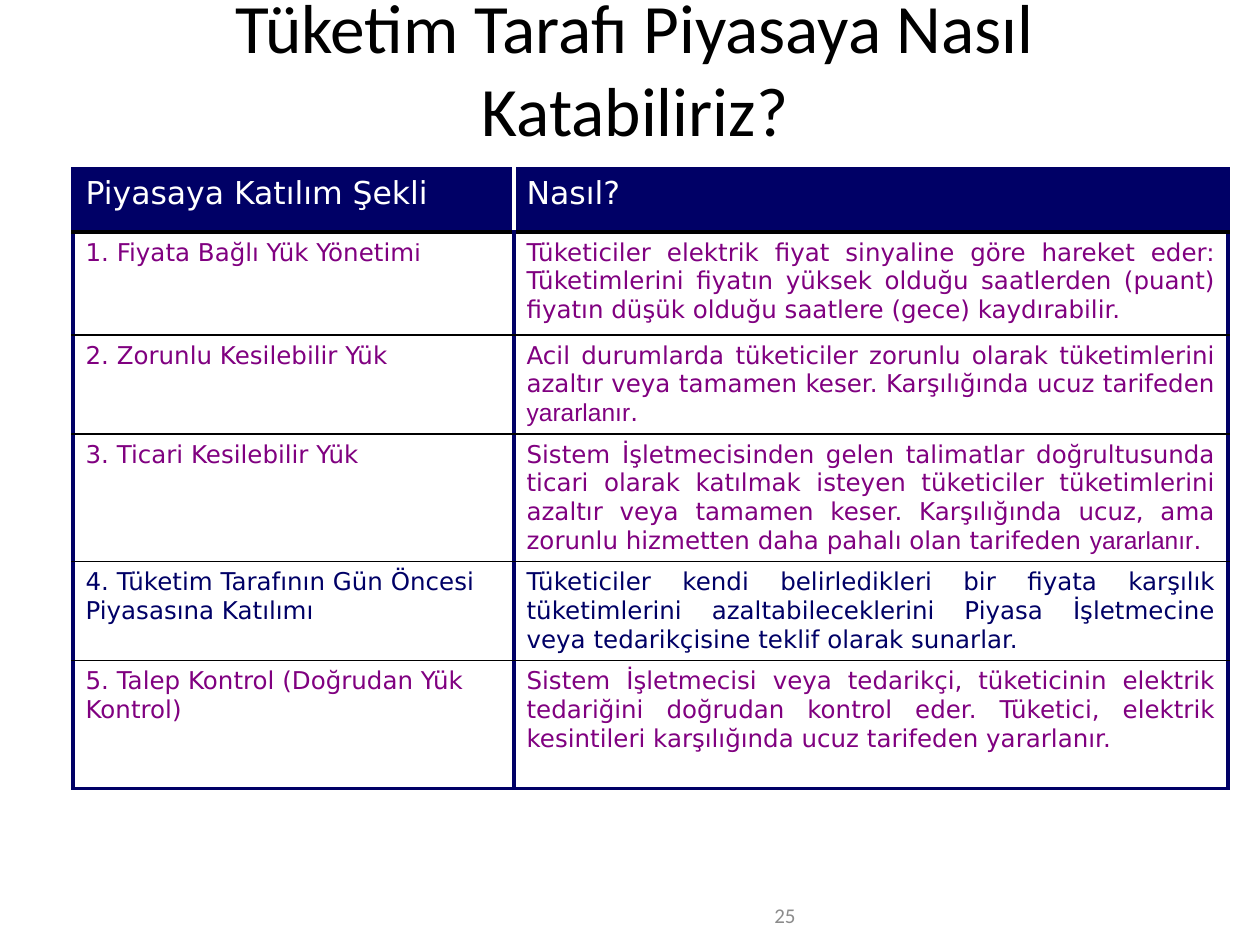
from lxml.etree import SubElement
from pptx import Presentation
from pptx.dml.color import RGBColor
from pptx.enum.text import MSO_ANCHOR as ANCHOR, MSO_AUTO_SIZE as AUTO_SIZE, PP_ALIGN as ALIGN
from pptx.oxml.ns import qn
from pptx.util import Emu, Pt

PX = 914400 / 126
NAVY, PURPLE, WHITE, BLACK, GREY = "000066", "800080", "FFFFFF", "000000", "8C8C8C"
SANS = "DejaVu Sans"


def add_runs(paragraph, parts, size, color):
    """Add (text, font name) parts that share one size and colour."""
    for text, font_name in parts:
        run = paragraph.add_run()
        run.text = text
        formats = {"name": font_name, "size": Pt(size), "bold": False}
        for attribute, value in formats.items():
            setattr(run.font, attribute, value)
        run.font.color.rgb = RGBColor.from_string(color)


def add_border(cell, side, color, width):
    line = SubElement(cell._tc.get_or_add_tcPr(), qn(f"a:ln{side}"), w=str(Pt(width)))
    fill = SubElement(line, qn("a:solidFill"))
    SubElement(fill, qn("a:srgbClr"), val=color)


prs = Presentation()
prs.slide_width, prs.slide_height = [Emu(round(n * PX)) for n in (1260, 945)]
slide = prs.slides.add_slide(prs.slide_layouts[5])

# Title and page number
title = slide.shapes.title
title.left, title.top, title.width, title.height = [
    Emu(round(n * PX)) for n in (63, 31, 1144, 73)]
page_number = slide.shapes.add_textbox(*[Emu(round(n * PX)) for n in (546, 900, 262, 31)])
for box, text, size, color, align in (
    (title, "Tüketim Tarafı Piyasaya Nasıl Katabiliriz?", 39.6, BLACK, ALIGN.CENTER),
    (page_number, "25", 12, GREY, ALIGN.RIGHT),
):
    frame = box.text_frame
    frame.word_wrap = True
    frame.auto_size = AUTO_SIZE.NONE
    frame.vertical_anchor = ANCHOR.MIDDLE
    frame.paragraphs[0].alignment = align
    add_runs(frame.paragraphs[0], [(text, "Calibri")], size, color)

# Ways of taking part in the market
benefit = [("yararlanır", "Arial"), (". ", SANS)]
rows = [
    ([("Piyasaya Katılım Şekli", SANS)], [("Nasıl?", SANS)]),
    ([("1. Fiyata Bağlı Yük Yönetim", SANS), ("i", "Arial")],
     [("Tüketiciler elektrik fiyat sinyaline göre hareket eder: Tüketimlerini fiyatın "
       "yüksek olduğu saatlerden (puant) fiyatın düşük olduğu saatlere (gece) "
       "kaydırabilir.", SANS)]),
    ([("2. Zorunlu Kesilebilir Yük", SANS)],
     [("Acil durumlarda tüketiciler zorunlu olarak tüketimlerini azaltır veya tamamen "
       "keser. Karşılığında ucuz tarifeden ", SANS)] + benefit),
    ([("3. Ticari Kesilebilir Yük", SANS)],
     [("Sistem İşletmecisinden gelen talimatlar doğrultusunda ticari olarak katılmak "
       "isteyen tüketiciler tüketimlerini azaltır veya tamamen keser. Karşılığında "
       "ucuz, ama zorunlu hizmetten daha pahalı olan tarifeden ", SANS)] + benefit),
    ([("4. Tüketim Tarafının Gün Öncesi Piyasasına Katılımı", SANS)],
     [("Tüketiciler kendi belirledikleri bir fiyata karşılık tüketimlerini "
       "azaltabileceklerini Piyasa İşletmecine veya tedarikçisine teklif olarak "
       "sunarlar.", SANS)]),
    ([("5. Talep Kontrol (Doğrudan Yük Kontrol)", SANS)],
     [("Sistem İşletmecisi veya tedarikçi, tüketicinin elektrik tedariğini doğrudan "
       "kontrol eder. Tüketici, elektrik kesintileri karşılığında ucuz tarifeden "
       "yararlanır. ", SANS)]),
]
column_widths = (441, 714)
row_heights = (63, 103, 99, 127, 99, 128)
row_colors = (WHITE, PURPLE, PURPLE, PURPLE, NAVY, PURPLE)
# Horizontal rules from the top edge to the bottom edge
rules = [(NAVY, 2.25), (BLACK, 2.25)] + [(BLACK, 1)] * 4 + [(NAVY, 2.25)]

frame_box = [Emu(round(n * PX)) for n in (73, 169, sum(column_widths), sum(row_heights))]
market = slide.shapes.add_table(len(rows), len(column_widths), *frame_box).table
for column, width in zip(market.columns, column_widths):
    column.width = Emu(round(width * PX))

for r, row_parts in enumerate(rows):
    market.rows[r].height = Emu(round(row_heights[r] * PX))
    header = r == 0
    middle = WHITE if header else NAVY
    for c, parts in enumerate(row_parts):
        cell = market.cell(r, c)
        sides = {
            "L": (middle if c else NAVY, 2.25),
            "R": (NAVY if c else middle, 2.25),
            "T": rules[r],
            "B": rules[r + 1],
        }
        for side, (color, width) in sides.items():
            add_border(cell, side, color, width)
        cell.fill.solid()
        cell.fill.fore_color.rgb = RGBColor.from_string(NAVY if header else WHITE)
        paragraph = cell.text_frame.paragraphs[0]
        paragraph.alignment = ALIGN.JUSTIFY if c else ALIGN.LEFT
        space_before = SubElement(paragraph._p.get_or_add_pPr(), qn("a:spcBef"))
        SubElement(space_before, qn("a:spcPct"), val="20000")
        add_runs(paragraph, parts, 18 if header else 14, row_colors[r])

prs.save("out.pptx")
